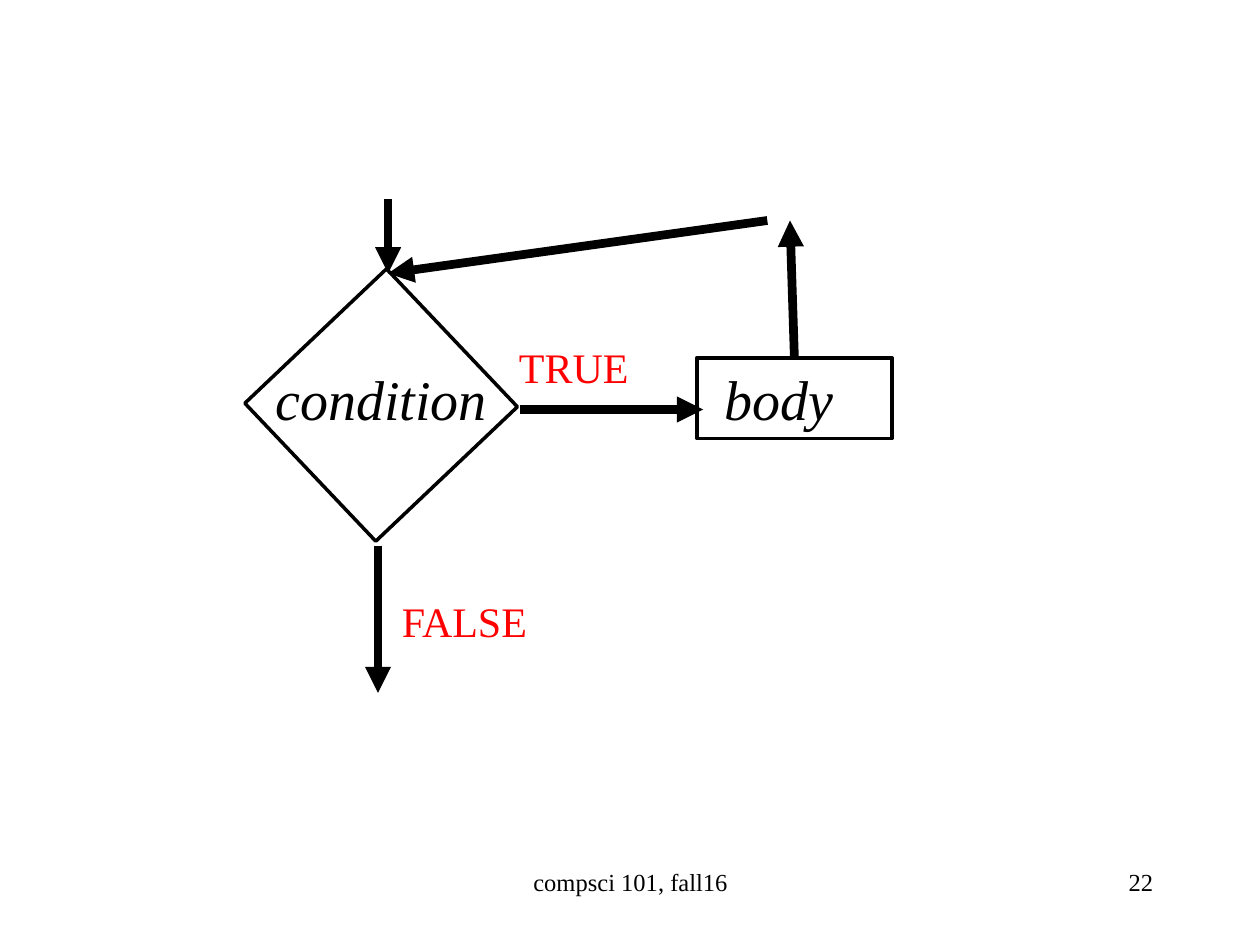
from dataclasses import dataclass

from lxml.etree import SubElement
from pptx import Presentation
from pptx.dml.color import RGBColor
from pptx.enum.shapes import MSO_CONNECTOR as Connector, MSO_SHAPE as Shape
from pptx.enum.text import MSO_ANCHOR as Anchor, PP_ALIGN as Align
from pptx.oxml.ns import qn
from pptx.util import Inches, Pt


@dataclass(frozen=True)
class Theme:
    font: str = "Times New Roman"
    ink: RGBColor = RGBColor(0, 0, 0)
    branch: RGBColor = RGBColor(255, 0, 0)
    step_size: int = 32
    branch_size: int = 24
    footer_size: int = 14
    outline: float = 2
    arrow: float = 5


THEME = Theme()

# Boxes are left, top, width, height in inches
CONDITION_BOX = (2.27, 2.44, 1.51, 1.55)
CONDITION_TURN = 46.5
BODY_BOX = (5.53, 2.84, 1.55, 0.64)
STEP_TEXT_TOP = 2.84
BODY_INDENT = 0.22

LOOP_TOP = (3.08, 2.17)
ARROWS = {
    "enter": ((3.08, 1.58), LOOP_TOP),
    "exit": ((3, 4.33), (3, 5.5)),
    "return": ((6.09, 1.75), LOOP_TOP),
    "leave body": ((6.31, 2.84), (6.27, 1.75)),
    "true": ((4.13, 3.25), (5.58, 3.25)),
}

BRANCHES = [
    ("TRUE", (4.02, 2.66, 1.08, 0.5)),
    ("FALSE", (3.09, 4.68, 1.21, 0.5)),
]
FOOTERS = [
    ("compsci 101, fall16", (3.42, 6.83, 3.17, 0.5), Align.CENTER),
    ("22", (7.17, 6.83, 2.08, 0.5), Align.RIGHT),
]


def write(shape, text, size, color=THEME.ink, align=Align.LEFT,
          italic=False, wrap=True, indent=0.1):
    frame = shape.text_frame
    frame.word_wrap = wrap
    frame.vertical_anchor = Anchor.TOP
    frame.margin_left = Inches(indent)
    paragraph = frame.paragraphs[0]
    paragraph.alignment = align
    run = paragraph.add_run()
    run.text = text
    run.font.name = THEME.font
    run.font.size = Pt(size)
    run.font.italic = italic
    run.font.color.rgb = color


def add_text(slide, text, box, size, **style):
    write(slide.shapes.add_textbox(*map(Inches, box)), text, size, **style)


def add_outline(slide, box, rotation=0):
    shape = slide.shapes.add_shape(Shape.RECTANGLE, *map(Inches, box))
    shape.rotation = rotation
    shape.shadow.inherit = False
    shape.fill.background()
    shape.line.color.rgb = THEME.ink
    shape.line.width = Pt(THEME.outline)
    return shape


def add_arrow(slide, start, end):
    arrow = slide.shapes.add_connector(
        Connector.STRAIGHT, *map(Inches, start + end))
    arrow.line.color.rgb = THEME.ink
    arrow.line.width = Pt(THEME.arrow)
    SubElement(arrow.line._get_or_add_ln(), qn("a:tailEnd"), type="triangle")
    SubElement(arrow._element.spPr, qn("a:effectLst"))
    return arrow


def main():
    presentation = Presentation()
    presentation.slide_width = Inches(10)
    presentation.slide_height = Inches(7.5)
    slide = presentation.slides.add_slide(presentation.slide_layouts[6])

    add_outline(slide, CONDITION_BOX, CONDITION_TURN)
    left, _, width, _ = CONDITION_BOX
    text_width = 2
    add_text(slide, "condition",
             (left + (width - text_width) / 2, STEP_TEXT_TOP, text_width, 0.64),
             THEME.step_size, align=Align.CENTER, italic=True)

    body = add_outline(slide, BODY_BOX)
    write(body, "body", THEME.step_size, italic=True, indent=BODY_INDENT)

    arrows = {name: add_arrow(slide, *ends) for name, ends in ARROWS.items()}
    arrows["leave body"].begin_connect(body, 0)

    for text, box in BRANCHES:
        add_text(slide, text, box, THEME.branch_size,
                 color=THEME.branch, wrap=False)
    for text, box, align in FOOTERS:
        add_text(slide, text, box, THEME.footer_size, align=align)

    presentation.save("out.pptx")


if __name__ == "__main__":
    main()
